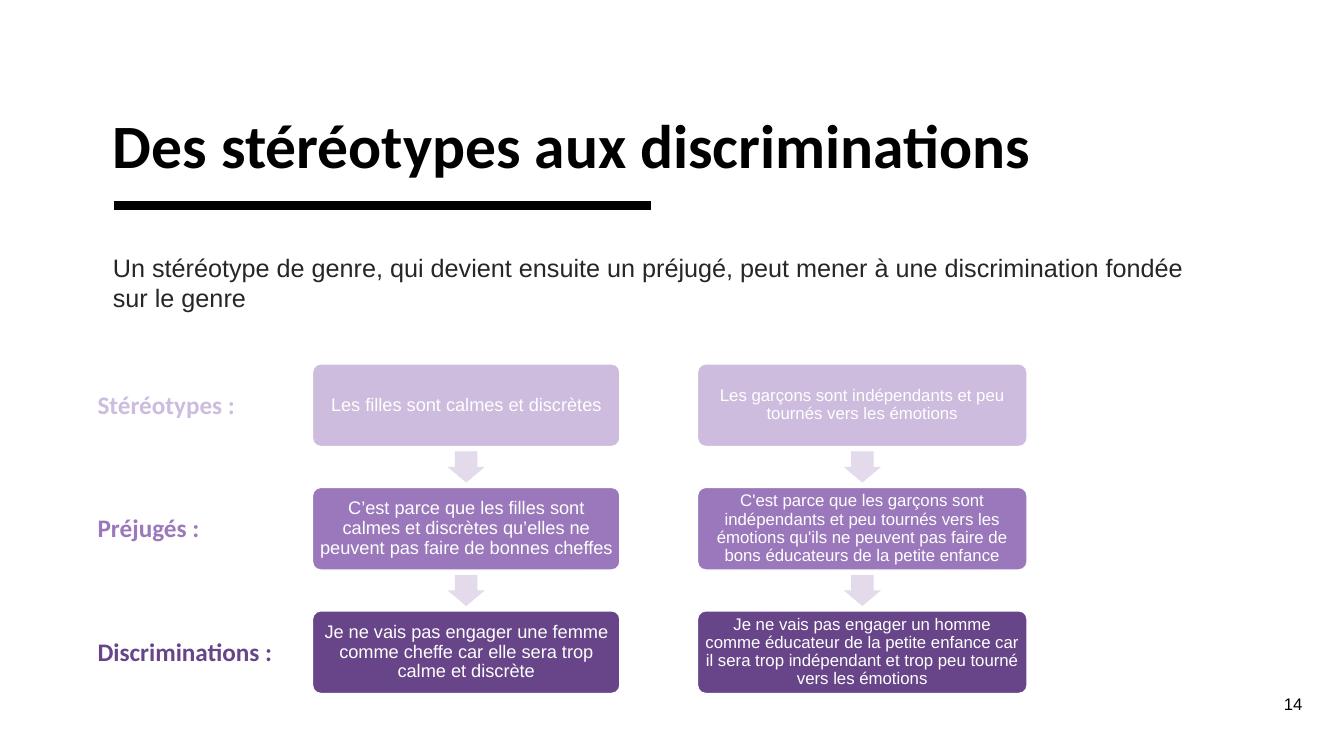
from dataclasses import dataclass

from lxml.etree import SubElement
from pptx import Presentation
from pptx.dml.color import RGBColor
from pptx.enum.shapes import MSO_CONNECTOR, MSO_SHAPE
from pptx.enum.text import MSO_ANCHOR as Anchor, MSO_AUTO_SIZE as AutoSize, PP_ALIGN as Align
from pptx.oxml.ns import qn
from pptx.shapes.base import BaseShape
from pptx.slide import Slide
from pptx.text.text import TextFrame
from pptx.util import Emu, Inches, Pt

GRID_COLUMNS, GRID_ROWS = 160, 90
CELL = Inches(1) / 12

BLACK = RGBColor(0x00, 0x00, 0x00)
WHITE = RGBColor(0xFF, 0xFF, 0xFF)
CHARCOAL = RGBColor(0x26, 0x26, 0x26)
LILAC = RGBColor(0xCD, 0xBC, 0xDD)
VIOLET = RGBColor(0x9A, 0x78, 0xBB)
PURPLE = RGBColor(0x67, 0x45, 0x88)
PALE_LILAC = RGBColor(0xE3, 0xDA, 0xEB)

HEADING_FONT, TEXT_FONT = "Calibri", "Arial"

FIRST_STAGE_TOP, STAGE_PITCH, STAGE_HEIGHT = 43.32, 14.7, 9.84
LABEL_LEFT, LABEL_WIDTH, LABEL_HEIGHT = 10.44, 23.64, 4.8
LABEL_OFFSET = 2.4
ARROW_LENGTH, ARROW_BREADTH = 3.72, 4.44
ARROW_CENTRE = (STAGE_HEIGHT + STAGE_PITCH) / 2


@dataclass(frozen=True)
class Area:
    """A rectangle in grid columns and rows."""
    left: float
    top: float
    width: float
    height: float

    def lengths(self) -> tuple[Emu, Emu, Emu, Emu]:
        return cells(self.left), cells(self.top), cells(self.width), cells(self.height)


@dataclass(frozen=True)
class Stage:
    label: str
    color: RGBColor


@dataclass(frozen=True)
class Chain:
    """One column of boxes, with a text for each stage."""
    left: float
    width: float
    size: int
    texts: tuple[str, ...]


@dataclass(frozen=True)
class TextStyle:
    font: str
    size: int
    color: RGBColor
    bold: bool = False
    align: Align = Align.LEFT
    line_spacing: float = 1.0
    space_before: int = 0


STAGES = (
    Stage("Stéréotypes :", LILAC),
    Stage("Préjugés :", VIOLET),
    Stage("Discriminations :", PURPLE),
)
CHAINS = (
    Chain(37.2, 36.6, 13, (
        "Les filles sont calmes et discrètes",
        "C’est parce que les filles sont calmes et discrètes qu’elles ne peuvent pas "
        "faire de bonnes cheffes",
        "Je ne vais pas engager une femme comme cheffe car elle sera trop calme et discrète",
    )),
    Chain(83.04, 39.24, 12, (
        "Les garçons sont indépendants et peu tournés vers les émotions",
        "C'est parce que les garçons sont indépendants et peu tournés vers les émotions "
        "qu'ils ne peuvent pas faire de bons éducateurs de la petite enfance",
        "Je ne vais pas engager un homme comme éducateur de la petite enfance car il sera "
        "trop indépendant et trop peu tourné vers les émotions",
    )),
)


def cells(count: float) -> Emu:
    return Emu(round(count * CELL))


def stage_top(index: int) -> float:
    return FIRST_STAGE_TOP + index * STAGE_PITCH


def write(frame: TextFrame, text: str, style: TextStyle, anchor: Anchor = Anchor.TOP) -> None:
    frame.word_wrap = True
    frame.auto_size = AutoSize.NONE
    frame.vertical_anchor = anchor
    paragraph = frame.paragraphs[0]
    paragraph.alignment = style.align
    paragraph.line_spacing = style.line_spacing
    paragraph.space_before = Pt(style.space_before)
    run = paragraph.add_run()
    run.text = text
    run.font.name = style.font
    run.font.size = Pt(style.size)
    run.font.bold = style.bold
    run.font.color.rgb = style.color


def set_insets(frame: TextFrame, inches: float) -> None:
    frame.margin_left = frame.margin_right = Inches(inches)
    frame.margin_top = frame.margin_bottom = Inches(inches)


def fill_placeholder(shape: BaseShape, area: Area, text: str, style: TextStyle,
                     anchor: Anchor = Anchor.TOP) -> None:
    shape.left, shape.top, shape.width, shape.height = area.lengths()
    set_insets(shape.text_frame, 0)
    write(shape.text_frame, text, style, anchor)


def remove_bullet(frame: TextFrame) -> None:
    properties = frame.paragraphs[0]._p.get_or_add_pPr()
    properties.set("marL", "0")
    properties.set("indent", "0")
    SubElement(properties, qn("a:buNone"))


def add_text(slide: Slide, area: Area, text: str, style: TextStyle,
             anchor: Anchor = Anchor.TOP) -> None:
    write(slide.shapes.add_textbox(*area.lengths()).text_frame, text, style, anchor)


def add_title_rule(slide: Slide) -> None:
    top = cells(24.48)
    rule = slide.shapes.add_connector(MSO_CONNECTOR.STRAIGHT, cells(13.56), top, cells(77.52), top)
    rule.line.color.rgb = BLACK
    rule.line.width = Pt(6)
    SubElement(rule._element.spPr, qn("a:effectLst"))


def add_box(slide: Slide, area: Area, text: str, size: int, color: RGBColor) -> None:
    box = slide.shapes.add_shape(MSO_SHAPE.ROUNDED_RECTANGLE, *area.lengths())
    box.adjustments[0] = 0.1
    box.shadow.inherit = False
    box.fill.solid()
    box.fill.fore_color.rgb = color
    box.line.color.rgb = WHITE
    box.line.width = Pt(1)
    set_insets(box.text_frame, 0.05)
    style = TextStyle(TEXT_FONT, size, WHITE, align=Align.CENTER, line_spacing=0.9)
    write(box.text_frame, text, style, Anchor.MIDDLE)


def add_down_arrow(slide: Slide, center_x: float, center_y: float) -> None:
    area = Area(center_x - ARROW_LENGTH / 2, center_y - ARROW_BREADTH / 2,
                ARROW_LENGTH, ARROW_BREADTH)
    arrow = slide.shapes.add_shape(MSO_SHAPE.RIGHT_ARROW, *area.lengths())
    arrow.rotation = 90
    arrow.adjustments[0], arrow.adjustments[1] = 0.6, 0.5
    arrow.shadow.inherit = False
    arrow.fill.solid()
    arrow.fill.fore_color.rgb = PALE_LILAC
    arrow.line.fill.background()


def add_chain(slide: Slide, chain: Chain) -> None:
    for index, (stage, text) in enumerate(zip(STAGES, chain.texts)):
        top = stage_top(index)
        if index:
            add_down_arrow(slide, chain.left + chain.width / 2, top - STAGE_PITCH + ARROW_CENTRE)
        area = Area(chain.left, top, chain.width, STAGE_HEIGHT)
        add_box(slide, area, text, chain.size, stage.color)


def main() -> None:
    presentation = Presentation()
    presentation.slide_width = cells(GRID_COLUMNS)
    presentation.slide_height = cells(GRID_ROWS)
    slide = presentation.slides.add_slide(presentation.slide_layouts[1])

    add_title_rule(slide)
    fill_placeholder(slide.shapes.title, Area(13.44, 13.08, 112.68, 8.52),
                     "Des stéréotypes aux discriminations",
                     TextStyle(HEADING_FONT, 44, BLACK, bold=True, line_spacing=0.9),
                     Anchor.BOTTOM)
    body = slide.placeholders[1]
    fill_placeholder(body, Area(13.44, 30, 130.92, 9.48),
                     "Un stéréotype de genre, qui devient ensuite un préjugé, peut mener à une "
                     "discrimination fondée sur le genre",
                     TextStyle(TEXT_FONT, 18, CHARCOAL, space_before=10))
    remove_bullet(body.text_frame)
    add_text(slide, Area(150.84, 82.56, 5.4, 2.4), "14",
             TextStyle(TEXT_FONT, 12, BLACK, align=Align.RIGHT), Anchor.MIDDLE)

    for chain in CHAINS:
        add_chain(slide, chain)
    for index, stage in enumerate(STAGES):
        area = Area(LABEL_LEFT, stage_top(index) + LABEL_OFFSET, LABEL_WIDTH, LABEL_HEIGHT)
        add_text(slide, area, stage.label, TextStyle(HEADING_FONT, 18, stage.color, bold=True))

    presentation.save("out.pptx")


if __name__ == "__main__":
    main()
